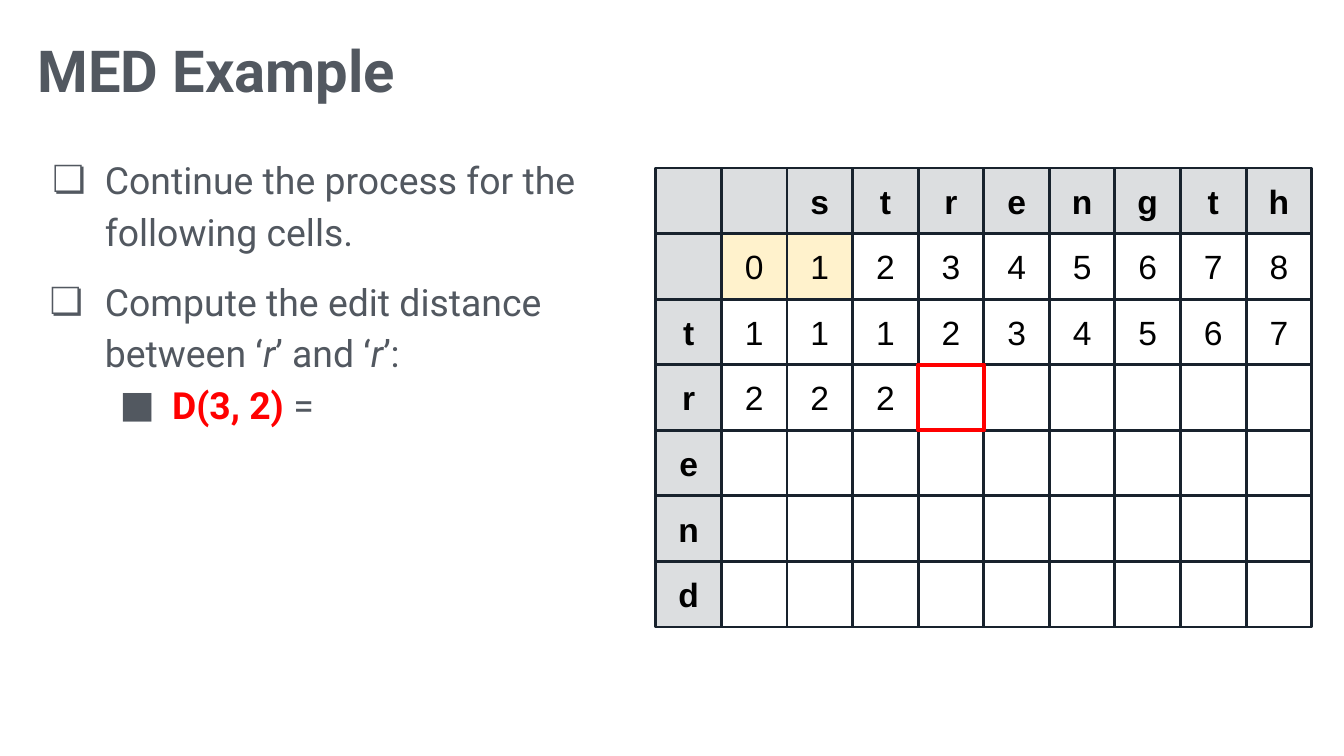
import lxml.etree
import pptx
import pptx.dml.color
import pptx.enum.shapes
import pptx.enum.text
import pptx.oxml.ns
import pptx.util

Inches = pptx.util.Inches
Pt = pptx.util.Pt
RGBColor = pptx.dml.color.RGBColor

SLATE = RGBColor(0x52, 0x58, 0x60)
NAVY = RGBColor(0x18, 0x22, 0x2D)
GREY = RGBColor(0xDC, 0xDE, 0xE0)
CREAM = RGBColor(0xFF, 0xF2, 0xCC)
RED = RGBColor(0xFF, 0x00, 0x00)
BLACK = RGBColor(0x00, 0x00, 0x00)

COLUMN_LETTERS = "  strength"
ROW_LETTERS = "  trend"
DISTANCES = {1: "012345678", 2: "111234567", 3: "222"}
PATH_CELLS = {(1, 1), (1, 2)}
CURRENT_CELL = (3, 4)

POINTS = [
    (0, 0.5, -0.39, 0, "❏", [("Continue the process for the following cells.", "")]),
    (0, 0.5, -0.41, 10, "❏", [
        ("Compute the edit distance between ‘", ""), ("r", "italic"),
        ("’ and ‘", ""), ("r", "italic"), ("’:", "")]),
    (1, 1, -0.39, 0, "■", [("D(3, 2)", "answer"), (" =", "")]),
]


def style_run(run, size, face, color, bold=False, italic=False):
    run.font.size = Pt(size)
    run.font.name = face
    run.font.color.rgb = color
    run.font.bold = bold
    run.font.italic = italic


def set_frame(frame, inset, anchor):
    frame.word_wrap = True
    frame.auto_size = pptx.enum.text.MSO_AUTO_SIZE.NONE
    frame.vertical_anchor = anchor
    frame.margin_left = frame.margin_right = Inches(inset)
    frame.margin_top = frame.margin_bottom = Inches(inset)


def add_bullet(para, symbol, indent, hanging):
    properties = para._p.get_or_add_pPr()
    properties.set("marL", str(Inches(indent)))
    properties.set("indent", str(Inches(hanging)))
    qn = pptx.oxml.ns.qn
    color = lxml.etree.SubElement(properties, qn("a:buClr"))
    lxml.etree.SubElement(color, qn("a:srgbClr"), val=str(SLATE))
    lxml.etree.SubElement(properties, qn("a:buSzPts"), val="2000")
    lxml.etree.SubElement(properties, qn("a:buFont"), typeface="Roboto")
    lxml.etree.SubElement(properties, qn("a:buChar"), char=symbol)


def place_title(page, left, top, width, height):
    title = page.shapes.title
    title.left, title.top = Inches(left), Inches(top)
    title.width, title.height = Inches(width), Inches(height)
    title.text_frame.text = "MED Example"
    set_frame(title.text_frame, 0.06, pptx.enum.text.MSO_ANCHOR.TOP)
    para = title.text_frame.paragraphs[0]
    para.alignment = pptx.enum.text.PP_ALIGN.LEFT
    style_run(para.runs[0], 31, "Roboto", SLATE, bold=True)


def place_points(page, left, top, width, height):
    box = page.shapes.add_textbox(Inches(left), Inches(top), Inches(width), Inches(height))
    frame = box.text_frame
    set_frame(frame, 0.06, pptx.enum.text.MSO_ANCHOR.TOP)
    for index, (level, indent, hanging, before, symbol, pieces) in enumerate(POINTS):
        para = frame.add_paragraph() if index else frame.paragraphs[0]
        para.level = level
        add_bullet(para, symbol, indent, hanging)
        para.line_spacing = 1.15
        para.space_before = Pt(before)
        for text, role in pieces:
            run = para.add_run()
            run.text = text
            answer = role == "answer"
            style_run(run, 20, "Roboto", RED if answer else SLATE, answer, role == "italic")


def add_cell(page, left, top, side, fill=None, line=NAVY, weight=1.5):
    cell = page.shapes.add_shape(
        pptx.enum.shapes.MSO_SHAPE.RECTANGLE,
        Inches(left), Inches(top), Inches(side), Inches(side))
    cell.shadow.inherit = False
    if fill is None:
        cell.fill.background()
    else:
        cell.fill.solid()
        cell.fill.fore_color.rgb = fill
    cell.line.color.rgb = line
    cell.line.width = Pt(weight)
    return cell


def cell_text(row, column):
    if row == 0:
        return COLUMN_LETTERS[column].strip()
    if column == 0:
        return ROW_LETTERS[row].strip()
    return DISTANCES.get(row, "")[column - 1:column]


def place_matrix(page, left, top, width):
    side = width / len(COLUMN_LETTERS)
    for row in range(len(ROW_LETTERS)):
        for column in range(len(COLUMN_LETTERS)):
            header = row == 0 or column == 0
            fill = GREY if header else CREAM if (row, column) in PATH_CELLS else None
            cell = add_cell(page, left + column * side, top + row * side, side, fill)
            text = cell_text(row, column)
            if text:
                cell.text_frame.text = text
                set_frame(cell.text_frame, 0.1, pptx.enum.text.MSO_ANCHOR.MIDDLE)
                para = cell.text_frame.paragraphs[0]
                para.alignment = pptx.enum.text.PP_ALIGN.CENTER
                style_run(para.runs[0], 18, "Arial", BLACK, bold=header)
    row, column = CURRENT_CELL
    add_cell(page, left + column * side, top + row * side, side, line=RED, weight=2.25)


def main():
    deck = pptx.Presentation()
    deck.slide_width = Inches(10)
    deck.slide_height = deck.slide_width * 9 // 16
    page = deck.slides.add_slide(deck.slide_layouts.get_by_name("Title Only"))
    place_title(page, 0.22, 0.2, 9.53, 0.49)
    place_points(page, 0.22, 1.06, 4.65, 3.8)
    place_matrix(page, 4.88, 1.25, 4.88)
    deck.save("out.pptx")


if __name__ == "__main__":
    main()
